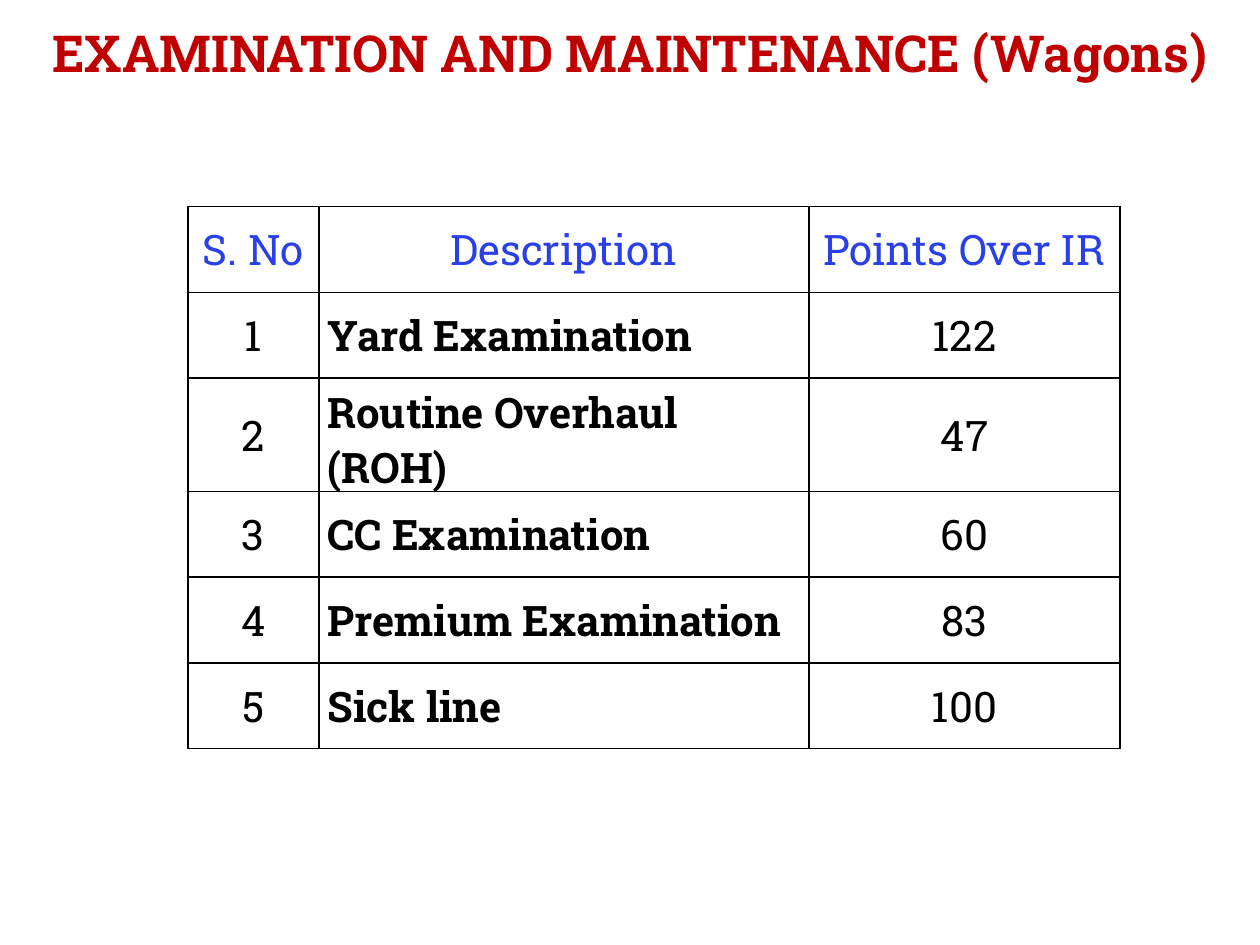
from lxml import etree
from pptx import Presentation
from pptx import util as u
from pptx.dml.color import RGBColor
from pptx.enum import text
from pptx.oxml.ns import qn

COLORS = {"title": "C00000", "header": "2940E9", "body": "000000", "border": "000000"}
HEADER = ("S. No", "Description", "Points Over IR")
EXAMINATIONS = (
    ("Yard Examination", 122),
    ("Routine Overhaul (ROH)", 47),
    ("CC Examination", 60),
    ("Premium Examination", 83),
    ("Sick line", 100),
)


class SlideBuilder:
    """Holds the style and the current slide, and adds elements to it."""

    font_name = "Roboto Slab"
    table_size = 24
    border_width = 1

    def __init__(self, slide):
        self.slide = slide

    def add_text(self, frame, content, size, color, bold, centered):
        paragraph = frame.paragraphs[0]
        paragraph.alignment = text.PP_ALIGN.CENTER if centered else text.PP_ALIGN.LEFT
        run = paragraph.add_run()
        run.text = content
        run.font.name = self.font_name
        run.font.size = u.Pt(size)
        run.font.bold = bold
        run.font.color.rgb = RGBColor.from_string(COLORS[color])

    def title(self, content, left, top, width, height):
        box = self.slide.shapes.add_textbox(*map(u.Inches, (left, top, width, height)))
        frame = box.text_frame
        frame.word_wrap = True
        frame.auto_size = text.MSO_AUTO_SIZE.SHAPE_TO_FIT_TEXT
        frame.margin_left = frame.margin_right = u.Inches(0.13)
        frame.margin_top = frame.margin_bottom = u.Inches(0.07)
        self.add_text(frame, content, 29.1, "title", True, True)

    def borders(self, cell):
        properties = cell._tc.get_or_add_tcPr()
        for side in ("a:lnL", "a:lnR", "a:lnT", "a:lnB"):
            line = etree.SubElement(properties, qn(side), w=str(u.Pt(self.border_width)))
            fill = etree.SubElement(line, qn("a:solidFill"))
            etree.SubElement(fill, qn("a:srgbClr"), val=COLORS["border"])

    def cell(self, cell, content, color, bold, centered):
        cell.vertical_anchor = text.MSO_ANCHOR.MIDDLE
        cell.margin_left = cell.margin_right = u.Inches(0.07)
        cell.margin_top = cell.margin_bottom = u.Inches(0.05)
        self.borders(cell)
        cell.fill.background()
        self.add_text(cell.text_frame, content, self.table_size, color, bold, centered)

    def table(self, rows, left, top, widths, row_height):
        frame = self.slide.shapes.add_table(
            len(rows), len(widths), u.Inches(left), u.Inches(top),
            u.Inches(sum(widths)), u.Inches(row_height * len(rows)),
        )
        table = frame.table
        table.first_row = table.horz_banding = False
        for column, width in zip(table.columns, widths):
            column.width = u.Inches(width)
        for row_index, row in enumerate(rows):
            is_header = row_index == 0
            table.rows[row_index].height = u.Inches(row_height)
            for column_index, content in enumerate(row):
                is_description = column_index == 1 and not is_header
                self.cell(
                    table.cell(row_index, column_index), str(content),
                    "header" if is_header else "body", is_description, not is_description,
                )


def main():
    presentation = Presentation()
    presentation.slide_width = u.Inches(10)
    presentation.slide_height = u.Inches(7.5)
    builder = SlideBuilder(presentation.slides.add_slide(presentation.slide_layouts[6]))
    builder.title("EXAMINATION AND MAINTENANCE (Wagons)", 0.07, 0.1, 9.86, 0.62)
    rows = [HEADER] + [(number, *row) for number, row in enumerate(EXAMINATIONS, 1)]
    builder.table(rows, 1.49, 1.64, (1.04, 3.89, 2.47), 0.68)
    presentation.save("out.pptx")


if __name__ == "__main__":
    main()
